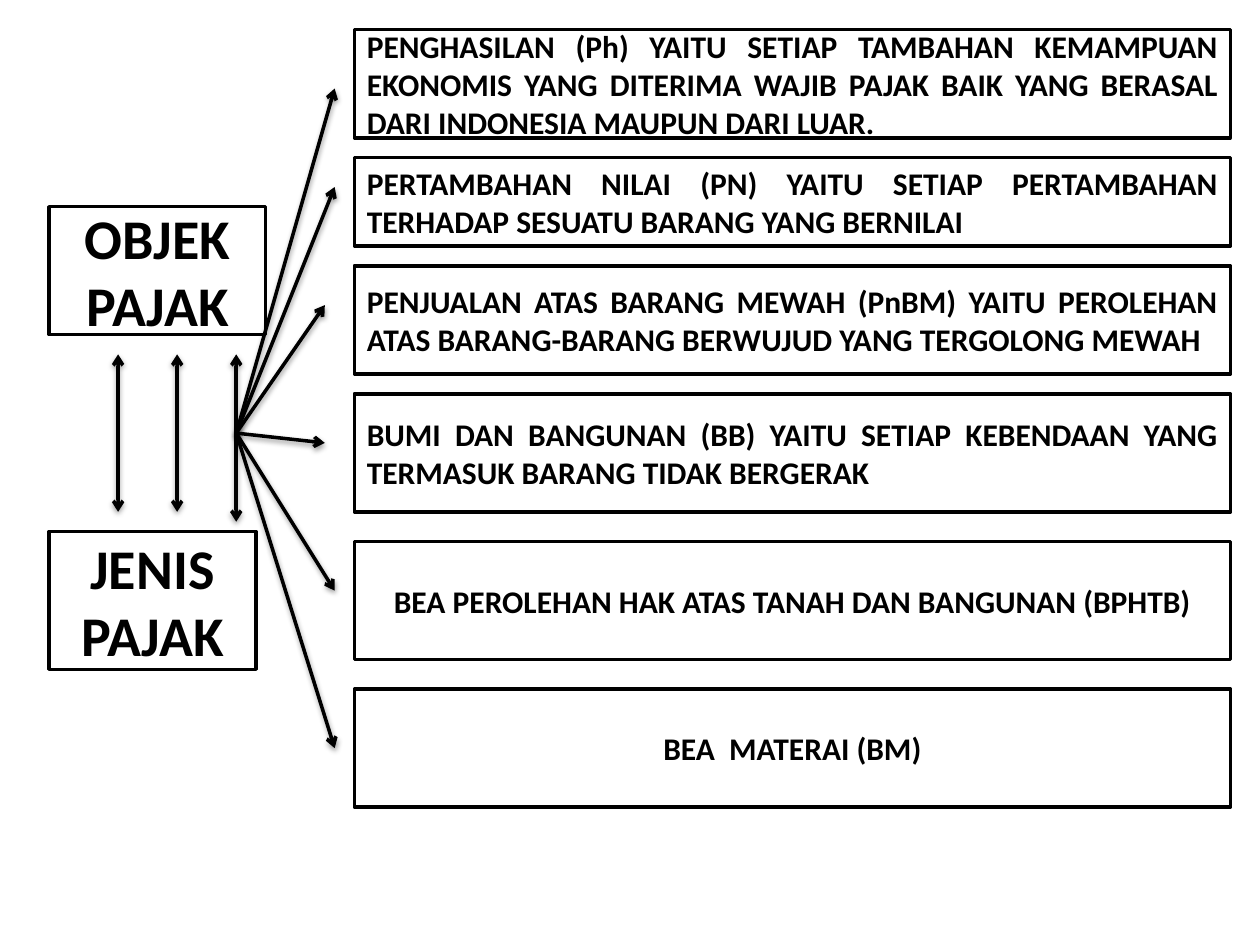
from lxml import etree
from pptx import Presentation
from pptx.dml.color import RGBColor
from pptx.enum.shapes import MSO_CONNECTOR, MSO_SHAPE
from pptx.enum.text import MSO_ANCHOR, PP_ALIGN
from pptx.oxml.ns import qn
from pptx.util import Inches, Pt

RECTANGLE = MSO_SHAPE.RECTANGLE
STRAIGHT = MSO_CONNECTOR.STRAIGHT
MIDDLE = MSO_ANCHOR.MIDDLE
CENTER, JUSTIFY = PP_ALIGN.CENTER, PP_ALIGN.JUSTIFY

WIDTH, HEIGHT = Inches(10), Inches(7.5)
COLUMNS, ROWS = 128, 96
BLACK, WHITE = "000000", "FFFFFF"
FONT = "Calibri"

TOPICS = [
    ("OBJEK PAJAK", (5, 21, 22, 13)),
    ("JENIS PAJAK", (5, 54, 21, 14)),
]
DETAIL_LEFT, DETAIL_WIDTH = 36, 89
DETAILS = [
    ("PENGHASILAN (Ph) YAITU SETIAP TAMBAHAN KEMAMPUAN EKONOMIS YANG DITERIMA "
     "WAJIB PAJAK BAIK YANG BERASAL DARI INDONESIA MAUPUN DARI LUAR.", 3, 11, JUSTIFY),
    ("PERTAMBAHAN NILAI (PN) YAITU SETIAP PERTAMBAHAN TERHADAP SESUATU BARANG "
     "YANG BERNILAI", 16, 9, JUSTIFY),
    ("PENJUALAN ATAS BARANG MEWAH (PnBM) YAITU PEROLEHAN ATAS BARANG-BARANG "
     "BERWUJUD YANG TERGOLONG MEWAH", 27, 11, JUSTIFY),
    ("BUMI DAN BANGUNAN (BB) YAITU SETIAP KEBENDAAN YANG TERMASUK BARANG TIDAK "
     "BERGERAK", 40, 12, JUSTIFY),
    ("BEA PEROLEHAN HAK ATAS TANAH DAN BANGUNAN (BPHTB)", 55, 12, CENTER),
    ("BEA  MATERAI (BM)", 70, 12, CENTER),
]
LINK_TOP = 36
LINKS = [(12, 52), (18, 52), (24, 53)]
HUB = (24, 44)
TIPS = [(34, 9), (34, 19), (33, 31), (33, 45), (34, 60), (34, 76)]


def color(value):
    """Turn a hex string into a colour."""
    return RGBColor.from_string(value)


def across(columns):
    """Convert grid columns to a length."""
    return round(WIDTH * columns / COLUMNS)


def down(rows):
    """Convert grid rows to a length."""
    return round(HEIGHT * rows / ROWS)


def write(shape, text, size=18, align=CENTER, bold=True, ink=BLACK):
    """Put one formatted paragraph into a shape."""
    frame = shape.text_frame
    frame.word_wrap = True
    frame.vertical_anchor = MIDDLE
    para = frame.paragraphs[0]
    para.alignment = align
    span = para.add_run()
    span.text = text
    span.font.name = FONT
    span.font.size = Pt(size)
    span.font.bold = bold
    span.font.color.rgb = color(ink)


def add_box(page, box, text, **style):
    """Draw an outlined rectangle with text in a grid box."""
    left, top, width, height = box
    shape = page.shapes.add_shape(
        RECTANGLE, across(left), down(top), across(width), down(height))
    shape.shadow.inherit = False
    shape.fill.solid()
    shape.fill.fore_color.rgb = color(WHITE)
    shape.line.color.rgb = color(BLACK)
    shape.line.width = Pt(2)
    write(shape, text, **style)


def add_shadow(connector):
    """Give a connector a soft shadow straight below it."""
    effects = etree.SubElement(connector._element.spPr, qn("a:effectLst"))
    shadow = etree.SubElement(
        effects, qn("a:outerShdw"), blurRad=str(Pt(3.1)), dist=str(Pt(1.6)),
        dir="5400000", rotWithShape="0")
    tint = etree.SubElement(shadow, qn("a:srgbClr"), val=BLACK)
    etree.SubElement(tint, qn("a:alpha"), val="38000")


def add_arrow(page, start, end, ends=("tailEnd",)):
    """Draw a shadowed arrow between two grid points."""
    connector = page.shapes.add_connector(
        STRAIGHT, across(start[0]), down(start[1]), across(end[0]), down(end[1]))
    connector.line.color.rgb = color(BLACK)
    connector.line.width = Pt(2)
    outline = connector.line._get_or_add_ln()
    for name in ends:
        etree.SubElement(outline, qn(f"a:{name}"), type="arrow")
    add_shadow(connector)


def add_topics(page):
    """Place the two topic boxes and the double arrows between them."""
    for text, box in TOPICS:
        add_box(page, box, text, size=32)
    for column, bottom in LINKS:
        add_arrow(page, (column, LINK_TOP), (column, bottom), ("headEnd", "tailEnd"))


def add_details(page, left, width):
    """Place the column of detail boxes and the arrows fanning out to it."""
    for text, top, height, align in DETAILS:
        add_box(page, (left, top, width, height), text, align=align)
    for tip in TIPS:
        add_arrow(page, HUB, tip)


def main():
    """Build the deck and save it."""
    deck = Presentation()
    deck.slide_width, deck.slide_height = WIDTH, HEIGHT
    page = deck.slides.add_slide(deck.slide_layouts.get_by_name("Blank"))
    add_topics(page)
    add_details(page, DETAIL_LEFT, DETAIL_WIDTH)
    deck.save("out.pptx")


if __name__ == "__main__":
    main()
